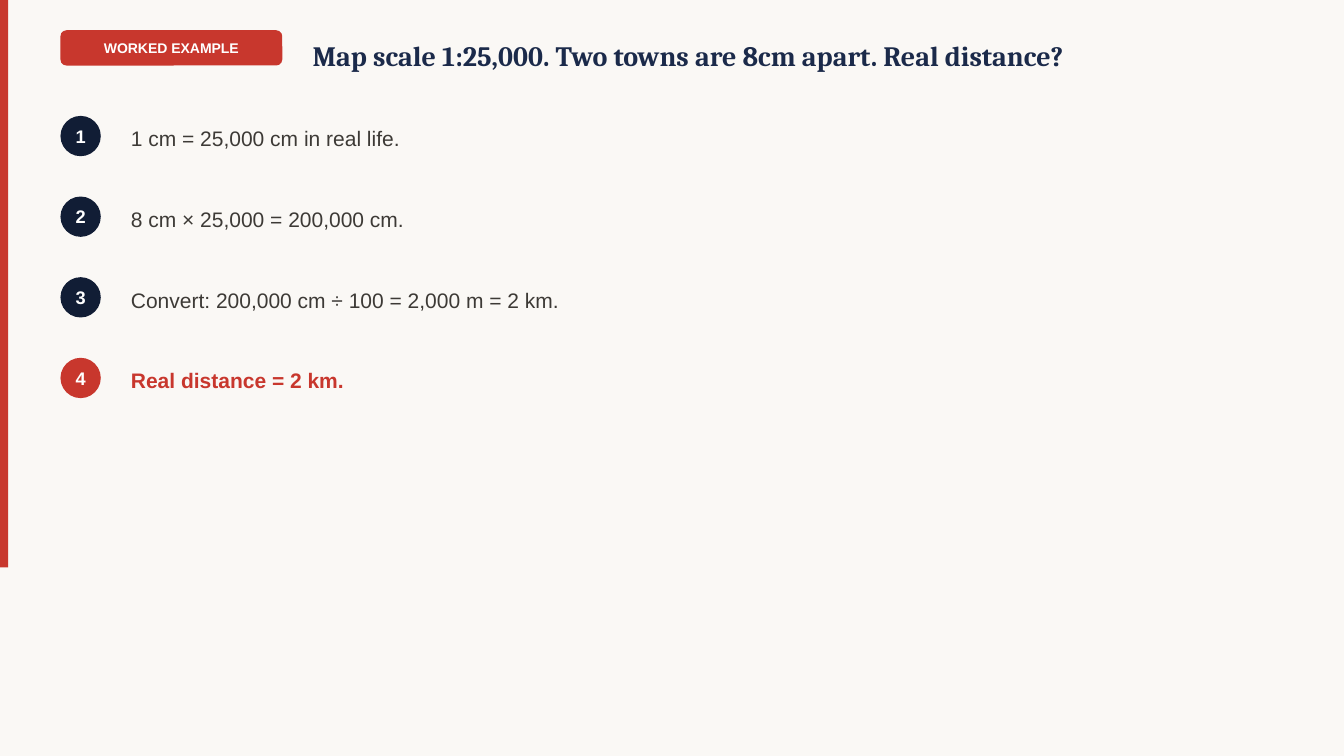
from pptx import Presentation
from pptx.dml.color import RGBColor
from pptx.enum.shapes import MSO_SHAPE
from pptx.enum.text import MSO_ANCHOR, MSO_AUTO_SIZE, PP_ALIGN
from pptx.util import Emu, Pt

RECT, ROUNDED, OVAL = MSO_SHAPE.RECTANGLE, MSO_SHAPE.ROUNDED_RECTANGLE, MSO_SHAPE.OVAL
LEFT, CENTER = PP_ALIGN.LEFT, PP_ALIGN.CENTER
PX = 9144  # 100 px to the inch
COLORS = {"paper": "FAF8F5", "red": "C8372D", "navy": "111D35",
          "title": "1B2A4A", "body": "3D3A36", "white": "FFFFFF"}


def add_filled(kind, x, y, w, h, color):
    sp = s.shapes.add_shape(kind, *(Emu(v * PX) for v in (x, y, w, h)))
    sp.shadow.inherit = False
    sp.fill.solid()
    sp.fill.fore_color.rgb = RGBColor.from_string(COLORS[color])
    sp.line.fill.background()
    return sp


def write(sp, text, size, color, bold=True, align=CENTER, font="Arial", inset=0):
    tf = sp.text_frame
    tf.word_wrap = True
    tf.auto_size = MSO_AUTO_SIZE.NONE
    tf.vertical_anchor = MSO_ANCHOR.MIDDLE
    tf.margin_left = tf.margin_right = Emu(inset * PX)
    p = tf.paragraphs[0]
    p.alignment = align
    r = p.add_run()
    r.text = text
    r.font.name, r.font.size, r.font.bold = font, Pt(size), bold
    r.font.color.rgb = RGBColor.from_string(COLORS[color])


prs = Presentation()
prs.slide_width, prs.slide_height = Emu(1333 * PX), Emu(750 * PX)
s = prs.slides.add_slide(prs.slide_layouts[5])
s.background.fill.solid()
s.background.fill.fore_color.rgb = RGBColor.from_string(COLORS["paper"])

add_filled(RECT, 0, 0, 8, 563, "red")
badge = add_filled(ROUNDED, 60, 30, 220, 35, "red")
badge.adjustments[0] = 0.17
write(badge, "WORKED EXAMPLE", 10, "white")

title = s.shapes.title
title.left, title.top, title.width, title.height = (Emu(v * PX) for v in (300, 30, 800, 50))
write(title, "Map scale 1:25,000. Two towns are 8cm apart. Real distance?", 20, "title",
      align=LEFT, font="Cambria", inset=10)

steps = ["1 cm = 25,000 cm in real life.",
         "8 cm × 25,000 = 200,000 cm.",
         "Convert: 200,000 cm ÷ 100 = 2,000 m = 2 km.",
         "Real distance = 2 km."]
for i, step in enumerate(steps):
    y = 110 + 80 * i
    is_answer = i == len(steps) - 1
    number = add_filled(OVAL, 60, y + 5, 40, 40, "red" if is_answer else "navy")
    write(number, str(i + 1), 13, "white")
    box = s.shapes.add_textbox(*(Emu(v * PX) for v in (120, y, 1050, 55)))
    write(box, step, 15, "red" if is_answer else "body", bold=is_answer, align=LEFT, inset=10)

prs.save("out.pptx")
